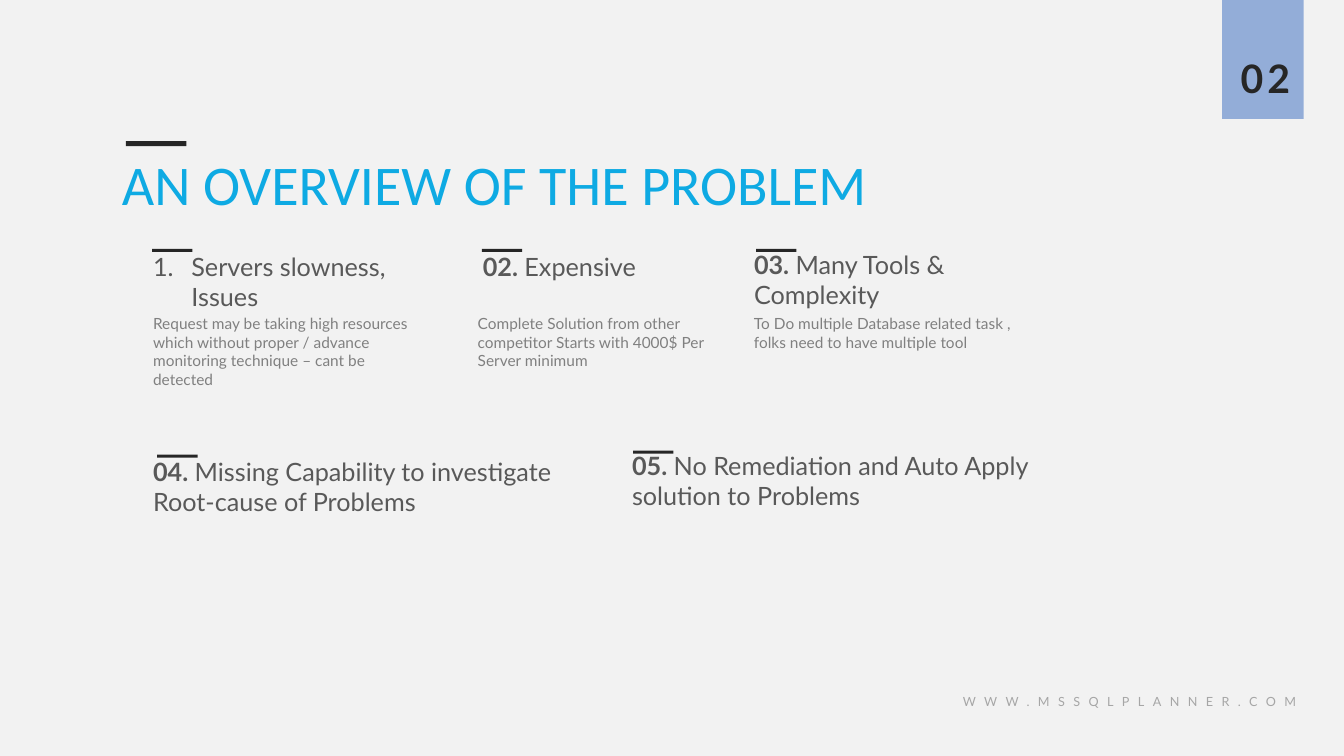
"""Builds the problem overview slide with five numbered issues."""
import pptx
import pptx.util
import pptx.dml.color
import pptx.enum.shapes
import pptx.enum.text
import pptx.oxml.ns
import lxml.etree

Inches, Pt = pptx.util.Inches, pptx.util.Pt
RGBColor = pptx.dml.color.RGBColor
ALIGN = pptx.enum.text.PP_ALIGN

PAPER = RGBColor(0xF2, 0xF2, 0xF2)
TAB = RGBColor(0x93, 0xAD, 0xD8)
DARK = RGBColor(0x26, 0x26, 0x26)
CYAN = RGBColor(0x0E, 0xAA, 0xE3)
HEAD = RGBColor(0x59, 0x59, 0x59)
BODY = RGBColor(0x80, 0x80, 0x80)
PALE = RGBColor(0xA6, 0xA6, 0xA6)

TITLE = "AN OVERVIEW OF THE PROBLEM"
PAGE = "02"
SITE = "WWW.MSSQLPLANNER.COM"

# number, heading, heading box, dash position
ISSUES = [
    ("", "Servers slowness, Issues", (1.42, 2.44, 3.22, 0.4), (1.51, 2.47)),
    ("02.", " Expensive", (4.69, 2.44, 2.62, 0.4), (4.78, 2.47)),
    ("03.", " Many Tools & Complexity", (7.38, 2.42, 3.22, 0.4), (7.5, 2.47)),
    ("04.", " Missing Capability to investigate Root-cause of Problems",
     (1.42, 4.48, 4.21, 0.71), (1.56, 4.51)),
    ("05.", " No Remediation and Auto Apply solution to Problems",
     (6.17, 4.42, 4.21, 0.71), (6.28, 4.47)),
]
DETAILS = [
    (1.42, "Request may be taking high resources which without proper / advance "
           "monitoring technique – cant be detected"),
    (4.64, "Complete Solution from other competitor Starts with 4000$ Per Server minimum"),
    (7.38, "To Do multiple Database related task , folks need to have multiple tool"),
]


def add_bar(s, left, top, width, height, color):
    """Add a plain filled rectangle."""
    sp = s.shapes.add_shape(pptx.enum.shapes.MSO_SHAPE.RECTANGLE, Inches(left),
                            Inches(top), Inches(width), Inches(height))
    sp.shadow.inherit = False
    sp.fill.solid()
    sp.fill.fore_color.rgb = color
    sp.line.fill.background()


def add_text(s, text, box, size, color, lead="", font="Lato", bold=False,
             align=ALIGN.LEFT, spacing=0, numbered=False, sp=None):
    """Write text, after an optional bold lead, in a new box or the given shape."""
    sp = sp or s.shapes.add_textbox(0, 0, 0, 0)
    sp.left, sp.top, sp.width, sp.height = (Inches(v) for v in box)
    tf = sp.text_frame
    tf.word_wrap = True
    tf.auto_size = pptx.enum.text.MSO_AUTO_SIZE.NONE
    tf.vertical_anchor = pptx.enum.text.MSO_ANCHOR.TOP
    p = tf.paragraphs[0]
    p.alignment = align
    if numbered:
        pPr = p._p.get_or_add_pPr()
        pPr.set("marL", str(Inches(0.38)))
        pPr.set("indent", str(-Inches(0.38)))
        number = lxml.etree.SubElement(pPr, pptx.oxml.ns.qn("a:buAutoNum"))
        number.set("type", "arabicPeriod")
    for part, strong in ((lead, True), (text, bold)):
        if not part:
            continue
        r = p.add_run()
        r.text = part
        r.font.name, r.font.size, r.font.bold = font, Pt(size), strong
        r.font.color.rgb = color
        if spacing:
            r._r.get_or_add_rPr().set("spc", str(spacing * 100))


def main():
    """Build and save the slide."""
    prs = pptx.Presentation()
    prs.slide_width, prs.slide_height = Inches(13.33), Inches(7.5)
    s = prs.slides.add_slide(prs.slide_layouts[5])
    s.background.fill.solid()
    s.background.fill.fore_color.rgb = PAPER

    add_bar(s, 12.12, 0, 0.81, 1.18, TAB)
    add_text(s, PAGE, (12.08, 0.49, 0.94, 0.57), 28, DARK, bold=True,
             align=ALIGN.CENTER, spacing=3)
    add_text(s, TITLE, (1.11, 1.43, 10.63, 0.77), 40, CYAN, font="Calibri",
             sp=s.shapes.title)
    add_bar(s, 1.25, 1.4, 0.6, 0.05, DARK)

    for lead, heading, box, (left, top) in ISSUES:
        add_text(s, heading, box, 18, HEAD, lead=lead, numbered=not lead)
        add_bar(s, left, top, 0.4, 0.03, DARK)
    for left, detail in DETAILS:
        add_text(s, detail, (left, 3.07, 2.76, 0.66), 11, BODY)

    add_text(s, SITE, (9.14, 6.83, 3.81, 0.25), 9, PALE, align=ALIGN.RIGHT, spacing=6)
    prs.save("out.pptx")


if __name__ == "__main__":
    main()
